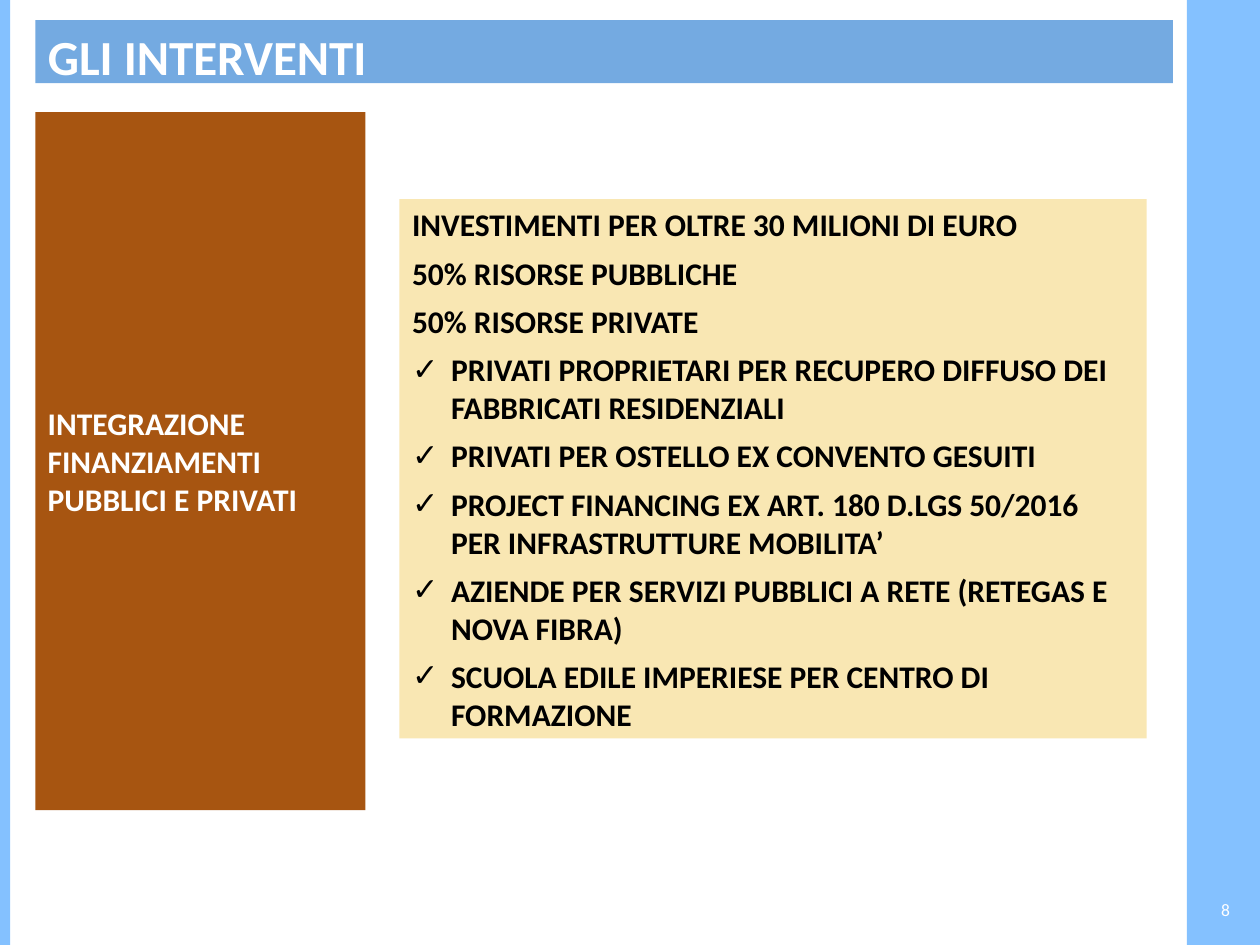
from dataclasses import dataclass

from lxml.etree import SubElement
from pptx import Presentation
from pptx.dml.color import RGBColor
from pptx.enum.shapes import MSO_SHAPE as Shape
from pptx.enum.text import MSO_ANCHOR as Anchor, MSO_AUTO_SIZE as AutoSize, PP_ALIGN as Align
from pptx.oxml.ns import qn
from pptx.util import Inches, Pt


@dataclass(frozen=True)
class Theme:
    font: str = "Calibri"
    band: str = "84C1FF"
    title_bar: str = "74AAE1"
    topic: str = "A75511"
    panel: str = "F9E7B3"
    light: str = "FFFFFF"
    dark: str = "000000"
    title_size: int = 28
    text_size: int = 18
    number_size: int = 10


FUNDING = [
    "INVESTIMENTI PER OLTRE 30 MILIONI DI EURO",
    "50% RISORSE PUBBLICHE",
    "50% RISORSE PRIVATE",
]
PARTNERS = [
    "PRIVATI PROPRIETARI PER RECUPERO DIFFUSO DEI FABBRICATI RESIDENZIALI",
    "PRIVATI PER OSTELLO EX CONVENTO GESUITI",
    "PROJECT FINANCING EX ART. 180 D.LGS 50/2016 PER INFRASTRUTTURE MOBILITA’",
    "AZIENDE PER SERVIZI PUBBLICI A RETE (RETEGAS E NOVA FIBRA)",
    "SCUOLA EDILE IMPERIESE PER CENTRO DI FORMAZIONE",
]


class SlideBuilder:
    def __init__(self, slide, theme):
        self.slide = slide
        self.theme = theme

    def place(self, shape, area):
        for name, length in zip(("left", "top", "width", "height"), area):
            setattr(shape, name, Inches(length))

    def paint(self, shape, color):
        shape.fill.solid()
        shape.fill.fore_color.rgb = RGBColor.from_string(color)

    def rectangle(self, area, color):
        box = self.slide.shapes.add_shape(Shape.RECTANGLE, *map(Inches, area))
        self.paint(box, color)
        box.line.fill.background()
        box.shadow.inherit = False
        return box

    def frame(self, shape, anchor):
        formats = {
            "word_wrap": True, "auto_size": AutoSize.NONE, "vertical_anchor": anchor,
            "margin_left": Inches(0.1), "margin_right": Inches(0.1),
            "margin_top": Inches(0.05), "margin_bottom": Inches(0.05),
        }
        for name, value in formats.items():
            setattr(shape.text_frame, name, value)
        return shape.text_frame

    def fill_paragraph(self, para, text, size, color, bold=True, align=Align.LEFT, after=0):
        spacing = {"alignment": align, "line_spacing": 1.0,
                   "space_before": Pt(0), "space_after": Pt(after)}
        for name, value in spacing.items():
            setattr(para, name, value)
        span = para.add_run()
        span.text = text
        for name, value in {"name": self.theme.font, "size": Pt(size), "bold": bold}.items():
            setattr(span.font, name, value)
        span.font.color.rgb = RGBColor.from_string(color)

    def bullet(self, para, mark=None, indent=0):
        """Give the paragraph a hanging mark, or remove the inherited one."""
        props = para._p.get_or_add_pPr()
        props.set("marL", str(Inches(indent)))
        props.set("indent", str(-Inches(indent)))
        if mark is None:
            SubElement(props, qn("a:buNone"))
            return
        color = SubElement(props, qn("a:buClr"))
        SubElement(color, qn("a:srgbClr"), val=self.theme.dark)
        SubElement(props, qn("a:buChar"), char=mark)

    def title(self, text, area):
        title = self.slide.shapes.title
        self.place(title, area)
        self.paint(title, self.theme.title_bar)
        para = self.frame(title, Anchor.TOP).paragraphs[0]
        self.fill_paragraph(para, text, self.theme.title_size, self.theme.light)

    def topic(self, text, area):
        box = self.rectangle(area, self.theme.topic)
        para = self.frame(box, Anchor.MIDDLE).paragraphs[0]
        self.fill_paragraph(para, text, self.theme.text_size, self.theme.light)

    def body(self, plain, checked, area):
        body = self.slide.placeholders[1]
        self.place(body, area)
        self.paint(body, self.theme.panel)
        frame = self.frame(body, Anchor.TOP)
        items = [(text, None, 0) for text in plain] + [(text, "✓", 0.31) for text in checked]
        for index, (text, mark, indent) in enumerate(items):
            para = frame.add_paragraph() if index else frame.paragraphs[0]
            self.bullet(para, mark, indent)
            self.fill_paragraph(para, text, self.theme.text_size, self.theme.dark, after=6)

    def page_number(self, text, area):
        box = self.slide.shapes.add_textbox(*map(Inches, area))
        para = self.frame(box, Anchor.MIDDLE).paragraphs[0]
        self.fill_paragraph(para, text, self.theme.number_size, self.theme.light,
                            bold=False, align=Align.RIGHT)


def main():
    deck = Presentation()
    deck.slide_width, deck.slide_height = Inches(10), Inches(7.5)
    page = SlideBuilder(deck.slides.add_slide(deck.slide_layouts[1]), Theme())
    for left, width in ((9.42, 0.58), (0, 0.08)):
        page.rectangle((left, 0, width, 7.5), page.theme.band)
    page.topic("INTEGRAZIONE FINANZIAMENTI PUBBLICI E PRIVATI", (0.28, 0.89, 2.62, 5.54))
    page.title("GLI INTERVENTI", (0.28, 0.16, 9.03, 0.5))
    page.body(FUNDING, PARTNERS, (3.17, 1.58, 5.93, 4.28))
    page.page_number("8", (8.78, 7.05, 1.08, 0.33))
    deck.save("out.pptx")


if __name__ == "__main__":
    main()
